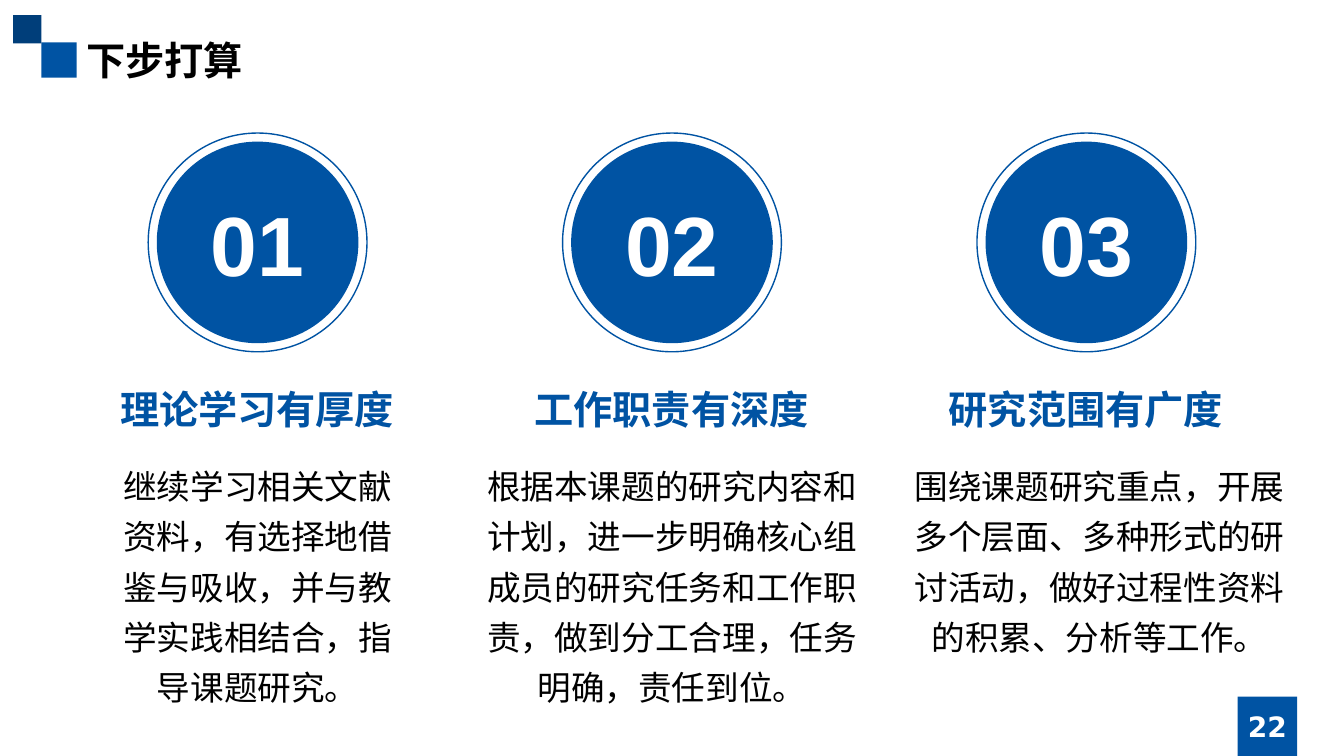
from lxml.etree import SubElement
from pptx import Presentation
from pptx.dml.color import RGBColor
from pptx.enum.shapes import MSO_SHAPE as Shape
from pptx.enum.text import MSO_ANCHOR as Anchor, PP_ALIGN as Align
from pptx.oxml.ns import qn
from pptx.util import Inches, Pt

COLORS = {"blue": "0053A3", "navy": "003E7A", "black": "000000", "white": "FFFFFF"}
CHINESE_FONT = "Noto Sans CJK SC"
SLIDE_WIDTH, SLIDE_HEIGHT = 13.33, 7.5
COLUMN_LEFT, COLUMN_WIDTH, COLUMN_TOP = 0.5, 4.11, 1.32
DISC, RING = 2, 2.17

# number, heading, body, body width, shift of the body from the column centre
PLANS = [
    ("01", "理论学习有厚度",
     "继续学习相关文献资料，有选择地借鉴与吸收，并与教学实践相结合，指导课题研究。", 2.95, 0),
    ("02", "工作职责有深度",
     "根据本课题的研究内容和计划，进一步明确核心组成员的研究任务和工作职责，"
     "做到分工合理，任务明确，责任到位。", 4.07, 0),
    ("03", "研究范围有广度",
     "围绕课题研究重点，开展多个层面、多种形式的研讨活动，"
     "做好过程性资料的积累、分析等工作。", 3.97, 0.13),
]


def color(name):
    return RGBColor.from_string(COLORS[name])


def write(shape, text, size, ink, font="Arial", bold=True, align=Align.CENTER,
          anchor=Anchor.TOP, spacing=None):
    frame = shape.text_frame
    frame.word_wrap = True
    frame.vertical_anchor = anchor
    paragraph = frame.paragraphs[0]
    paragraph.text = text
    paragraph.alignment = align
    if spacing:
        paragraph.line_spacing = spacing
    paragraph.font.size = Pt(size)
    paragraph.font.bold = bold
    paragraph.font.color.rgb = color(ink)
    paragraph.font.name = font
    properties = paragraph._p.pPr.find(qn("a:defRPr"))
    SubElement(properties, qn("a:ea")).set("typeface", CHINESE_FONT)


def add_text(slide, left, top, width, height, text, size, ink, **style):
    box = slide.shapes.add_textbox(*map(Inches, (left, top, width, height)))
    write(box, text, size, ink, **style)


def add_filled(slide, kind, left, top, width, height, fill=None, line=None):
    shape = slide.shapes.add_shape(kind, *map(Inches, (left, top, width, height)))
    shape.shadow.inherit = False
    if fill:
        shape.fill.solid()
        shape.fill.fore_color.rgb = color(fill)
    else:
        shape.fill.background()
    if line:
        shape.line.color.rgb = color(line)
        shape.line.width = Pt(1)
    else:
        shape.line.fill.background()
    return shape


def add_header(slide, left, top, title):
    small, large = 0.28, 0.35
    add_filled(slide, Shape.RECTANGLE, left + small, top + small - 0.01, large, large, "blue")
    add_filled(slide, Shape.RECTANGLE, left, top, small, small, "navy")
    add_text(slide, left + small + large, top + 0.16, 11.81, 0.57, title, 28, "black",
             font=CHINESE_FONT, align=Align.LEFT)


def add_page_number(slide, number):
    side, width = 0.59, 1.52
    left = SLIDE_WIDTH - width
    add_filled(slide, Shape.RECTANGLE, left + (width - side) / 2, SLIDE_HEIGHT - side,
               side, side, "blue")
    add_text(slide, left, 7.01, width, 0.4, number, 20, "white",
             font="DejaVu Sans", anchor=Anchor.MIDDLE)


def add_plan(slide, left, top, width, number, heading, body, body_width, body_shift):
    center = left + width / 2
    disc = add_filled(slide, Shape.OVAL, center - DISC / 2, top + (RING - DISC) / 2,
                      DISC, DISC, "blue")
    write(disc, number, 60, "white", anchor=Anchor.MIDDLE)
    add_filled(slide, Shape.OVAL, center - RING / 2, top, RING, RING, line="blue")
    add_text(slide, center - 1.48, top + 2.45, 2.95, 0.57, heading, 28, "blue")
    add_text(slide, center - body_width / 2 + body_shift, top + 3.15, body_width, 2.62,
             body, 24, "black", bold=False, spacing=1.25)


def main():
    presentation = Presentation()
    presentation.slide_width = Inches(SLIDE_WIDTH)
    presentation.slide_height = Inches(SLIDE_HEIGHT)
    slide = presentation.slides.add_slide(presentation.slide_layouts[6])
    add_header(slide, 0.13, 0.15, "下步打算")
    add_page_number(slide, "22")
    for column, plan in enumerate(PLANS):
        add_plan(slide, COLUMN_LEFT + column * COLUMN_WIDTH, COLUMN_TOP, COLUMN_WIDTH, *plan)
    presentation.save("out.pptx")


if __name__ == "__main__":
    main()
